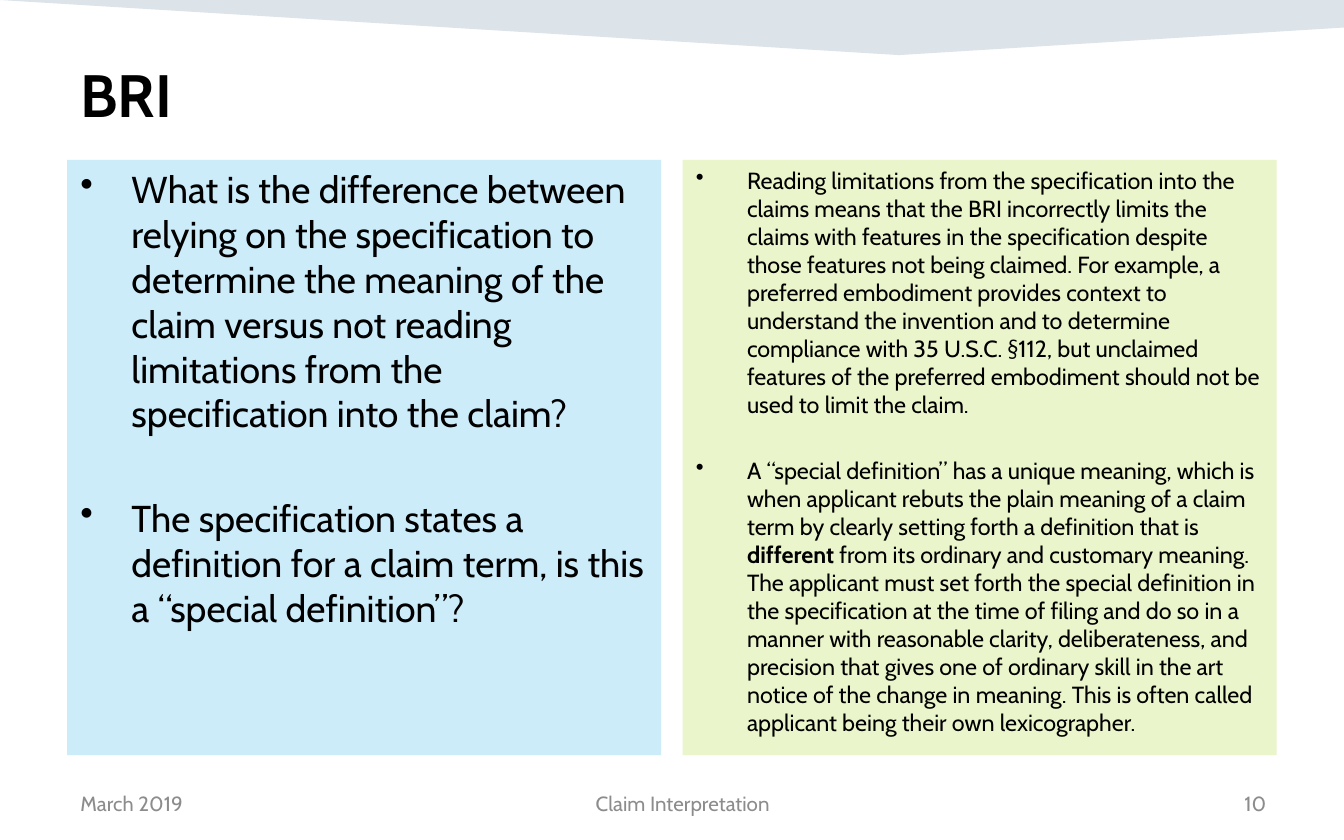
import pptx
import pptx.dml.color
import pptx.enum.shapes
import pptx.enum.text
import pptx.util
from lxml import etree

Inches = pptx.util.Inches
Pt = pptx.util.Pt
RGBColor = pptx.dml.color.RGBColor
ALIGN = pptx.enum.text.PP_ALIGN
ANCHOR = pptx.enum.text.MSO_ANCHOR

FONT = "Cabin"
BLACK = RGBColor(0x00, 0x00, 0x00)
GRAY = RGBColor(0x8C, 0x8C, 0x8C)
MIST = RGBColor(0xDC, 0xE3, 0xE9)
BLUE = RGBColor(0xCC, 0xEC, 0xFA)
GREEN = RGBColor(0xEB, 0xF5, 0xCB)

LEFT = [
    ["What is the difference between relying on the specification to determine "
     "the meaning of the claim versus not reading limitations from the "
     "specification into the claim?"],
    ["The specification states a definition for a claim term, is this a "
     "“special definition”?"],
]
RIGHT = [
    ["Reading limitations from the specification into the claims means that the "
     "BRI incorrectly limits the claims with features in the specification "
     "despite those features not being claimed. For example, a preferred "
     "embodiment provides context to understand the invention and to determine "
     "compliance with 35 U.S.C. §112, but unclaimed features of the preferred "
     "embodiment should not be used to limit the claim."],
    ["A “special definition” has a unique meaning, which is when applicant "
     "rebuts the plain meaning of a claim term by clearly setting forth a "
     "definition that is ",
     "different",
     " from its ordinary and customary meaning. The applicant must set forth the "
     "special definition in the specification at the time of filing and do so in "
     "a manner with reasonable clarity, deliberateness, and precision that gives "
     "one of ordinary skill in the art notice of the change in meaning. This is "
     "often called applicant being their own lexicographer."],
]


def style(para, size, color, bold=None):
    """Set the font of a whole paragraph."""
    font = para.font
    font.name, font.size, font.bold = FONT, Pt(size), bold
    font.color.rgb = color


def bullet(para):
    """Give a paragraph a hanging round bullet."""
    props = para._p.get_or_add_pPr()
    hang = Inches(0.38)
    props.set("marL", str(hang))
    props.set("indent", str(-hang))
    mark = etree.SubElement(props, pptx.oxml.ns.qn("a:buChar"))
    mark.set("char", "•")


def banner(slide, x, y, w, h):
    """Draw the pale band with its point along the top edge."""
    build = slide.shapes.build_freeform(x, y)
    build.add_line_segments(
        [(x + w, y), (x + w, y + h // 2), (x + int(w * 0.669), y + h)])
    shape = build.convert_to_shape()
    shape.shadow.inherit = False
    shape.fill.solid()
    shape.fill.fore_color.rgb = MIST
    shape.line.fill.background()


def label(slide, x, y, w, h, text, size, color, align=ALIGN.LEFT, bold=None):
    """Place one line of text at the bottom of its box."""
    frame = slide.shapes.add_textbox(x, y, w, h).text_frame
    frame.word_wrap = True
    frame.vertical_anchor = ANCHOR.BOTTOM
    para = frame.paragraphs[0]
    para.text, para.alignment = text, align
    style(para, size, color, bold)


def panel(slide, x, y, w, h, fill, size, items):
    """Place a filled panel of bullets, with every second run in bold."""
    shape = slide.shapes.add_shape(
        pptx.enum.shapes.MSO_SHAPE.RECTANGLE, x, y, w, h)
    shape.shadow.inherit = False
    shape.fill.solid()
    shape.fill.fore_color.rgb = fill
    shape.line.fill.background()
    frame = shape.text_frame
    frame.word_wrap = True
    frame.vertical_anchor = ANCHOR.TOP
    for i, runs in enumerate(items):
        para = frame.add_paragraph() if i else frame.paragraphs[0]
        para.alignment = ALIGN.LEFT
        para.space_before = Pt(size * 1.6 if i else 0)
        style(para, size, BLACK)
        bullet(para)
        for j, text in enumerate(runs):
            run = para.add_run()
            run.text = text
            if j % 2:
                run.font.bold = True


def columns(slide, x, y, w, h):
    """Place the two panels side by side."""
    gap = Inches(0.16)
    wide = (w - gap) // 2
    panel(slide, x, y, wide, h, BLUE, 20, LEFT)
    panel(slide, x + wide + gap, y, wide, h, GREEN, 12.5, RIGHT)


def footer(slide, x, y, w, h):
    """Place the date, the topic and the page number."""
    parts = [
        (0, 1.51, "March 2019", ALIGN.LEFT),
        (1.57, 6.02, "Claim Interpretation", ALIGN.CENTER),
        (7.67, 1.35, "10", ALIGN.RIGHT),
    ]
    for left, wide, text, align in parts:
        label(slide, x + Inches(left), y, Inches(wide), h, text, 11, GRAY, align)


def main():
    """Build and save the slide."""
    deck = pptx.Presentation()
    deck.slide_width, deck.slide_height = Inches(10), Inches(6.25)
    slide = deck.slides.add_slide(deck.slide_layouts[6])
    edge, wide = Inches(0.5), Inches(9)
    banner(slide, 0, 0, deck.slide_width, Inches(0.41))
    label(slide, edge, Inches(0.41), wide, Inches(0.6), "BRI", 32, BLACK,
          bold=True)
    columns(slide, edge, Inches(1.19), wide, Inches(4.43))
    footer(slide, edge, Inches(5.79), wide, Inches(0.33))
    deck.save("out.pptx")


if __name__ == "__main__":
    main()
